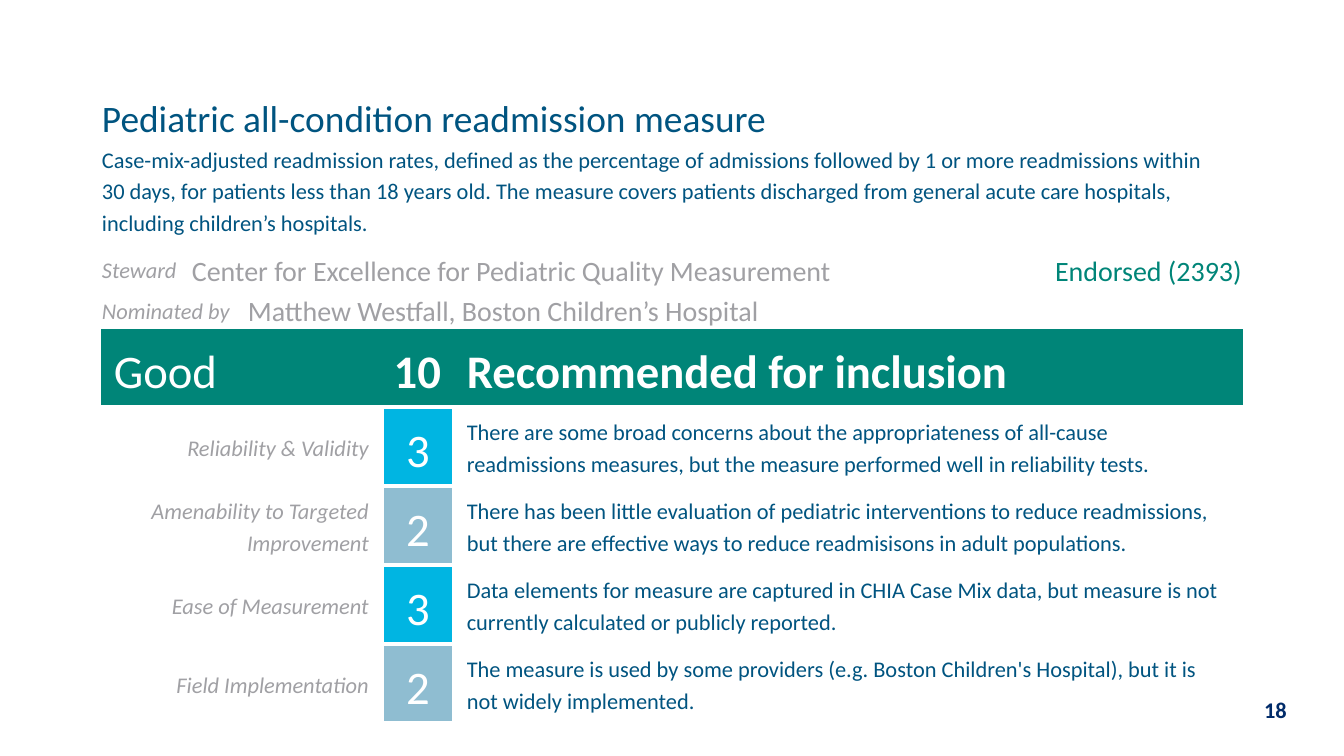
import pptx
import pptx.dml.color
import pptx.enum.text
import pptx.oxml
import pptx.oxml.ns
import pptx.util

EMU_PER_PX = 9144000 / 1344
FONT = "Calibri"
NAVY, GREY, GREEN, WHITE, PAGE = "005480", "A0A0A4", "008578", "FFFFFF", "002B69"
SCORE_FILLS = {3: "00B5E2", 2: "8FBDD1"}
NO_GRID_STYLE = "{2D5ABB26-0587-4C30-8999-92F81FD0307C}"
ALIGN = pptx.enum.text.PP_ALIGN
MIDDLE = pptx.enum.text.MSO_ANCHOR.MIDDLE
TOP = pptx.enum.text.MSO_ANCHOR.TOP

COLUMNS = [90, 56, 94, 41, 72, 442, 347]
ROWS = [53, 106, 41, 40, 77] + [79] * 4
DESCRIPTION = (
    "Case-mix-adjusted readmission rates, defined as the percentage of admissions "
    "followed by 1 or more readmissions within 30 days, for patients less than 18 years "
    "old. The measure covers patients discharged from general acute care hospitals, "
    "including children’s hospitals."
)
CRITERIA = [
    ("Reliability & Validity", 3,
     "There are some broad concerns about the appropriateness of all-cause readmissions "
     "measures, but the measure performed well in reliability tests."),
    ("Amenability to Targeted Improvement", 2,
     "There has been little evaluation of pediatric interventions to reduce readmissions, "
     "but there are effective ways to reduce readmisisons in adult populations."),
    ("Ease of Measurement", 3,
     "Data elements for measure are captured in CHIA Case Mix data, but measure is not "
     "currently calculated or publicly reported."),
    ("Field Implementation", 2,
     "The measure is used by some providers (e.g. Boston Children's Hospital), but it is "
     "not widely implemented."),
]


def px(n):
    """Turn pixels into EMU."""
    return pptx.util.Emu(round(n * EMU_PER_PX))


def rgb(color):
    """Turn a hex string into a colour."""
    return pptx.dml.color.RGBColor.from_string(color)


def write(tf, text, size=12, color=NAVY, bold=False, italic=False, align=ALIGN.LEFT, spacing=1.15):
    """Write one formatted paragraph into a text frame."""
    tf.word_wrap = True
    p = tf.paragraphs[0]
    p.alignment = align
    p.line_spacing = spacing
    r = p.add_run()
    r.text = text
    r.font.name = FONT
    r.font.size = pptx.util.Pt(size)
    r.font.bold = bold
    r.font.italic = italic
    r.font.color.rgb = rgb(color)


def set_borders(cell, sides):
    """Give the named sides of a cell a white border."""
    for side in sides:
        cell._tc.get_or_add_tcPr().append(pptx.oxml.parse_xml(
            f'<a:ln{side} {pptx.oxml.ns.nsdecls("a")} w="28575"><a:solidFill>'
            f'<a:srgbClr val="{WHITE}"/></a:solidFill></a:ln{side}>'))


def put(table, row, col, text, span=1, insets=(13, 7, 13, 7), anchor=MIDDLE,
        fill=None, borders="", **fmt):
    """Fill one cell, merged over a span of columns."""
    cell = table.cell(row, col)
    if span > 1:
        cell.merge(table.cell(row, col + span - 1))
    for i in range(col, col + span):
        part = table.cell(row, i)
        set_borders(part, borders)
        if fill:
            part.fill.solid()
            part.fill.fore_color.rgb = rgb(fill)
        else:
            part.fill.background()
    cell.margin_left, cell.margin_top, cell.margin_right, cell.margin_bottom = map(px, insets)
    cell.vertical_anchor = anchor
    write(cell.text_frame, text, **fmt)


def add_summary(table):
    """Write the measure's name, description, steward and nominator."""
    tight = (1, 1, 13, 0)
    label = dict(insets=tight, color=GREY, italic=True)
    name = dict(span=5, insets=tight, size=15, color=GREY)
    put(table, 0, 0, "Pediatric all-condition readmission measure", span=7, insets=tight, size=20)
    put(table, 1, 0, DESCRIPTION, span=7, insets=(1, 1, 13, 7), anchor=TOP)
    put(table, 2, 0, "Steward", **label)
    put(table, 2, 1, "Center for Excellence for Pediatric Quality Measurement", **name)
    put(table, 2, 6, "Endorsed (2393)", insets=(13, 1, 1, 0), size=15, color=GREEN,
        align=ALIGN.RIGHT)
    put(table, 3, 0, "Nominated by", span=2, **label)
    put(table, 3, 2, "Matthew Westfall, Boston Children’s Hospital", **name)


def add_ratings(table, first_row):
    """Write the overall rating and one row for each criterion."""
    band = dict(fill=GREEN, size=25, color=WHITE)
    total = sum(score for _, score, _ in CRITERIA)
    put(table, first_row, 0, "Good", span=3, **band)
    put(table, first_row, 3, str(total), span=2, bold=True, align=ALIGN.RIGHT, **band)
    put(table, first_row, 5, "Recommended for inclusion", span=2, bold=True, **band)
    for row, (criterion, score, reason) in enumerate(CRITERIA, first_row + 1):
        put(table, row, 0, criterion, span=4, borders="RT", color=GREY, italic=True,
            align=ALIGN.RIGHT)
        put(table, row, 4, str(score), fill=SCORE_FILLS[score], borders="LRTB", size=25,
            color=WHITE, align=ALIGN.CENTER)
        put(table, row, 5, reason, span=2, borders="LRTB")


def add_measure_table(s, x, y):
    """Add the measure table with its top left corner at x, y."""
    shape = s.shapes.add_table(len(ROWS), len(COLUMNS), px(x), px(y),
                               px(sum(COLUMNS)), px(sum(ROWS)))
    table = shape.table
    table.first_row = table.horz_banding = False
    table._tbl.tblPr.find(pptx.oxml.ns.qn("a:tableStyleId")).text = NO_GRID_STYLE
    for column, width in zip(table.columns, COLUMNS):
        column.width = px(width)
    for row, height in zip(table.rows, ROWS):
        row.height = px(height)
    add_summary(table)
    add_ratings(table, 4)


def add_page_number(s, x, y, w, h):
    """Add the page number in the given box."""
    tf = s.shapes.add_textbox(px(x), px(y), px(w), px(h)).text_frame
    tf.vertical_anchor = MIDDLE
    write(tf, "18", color=PAGE, bold=True, align=ALIGN.RIGHT, spacing=1.0)


def main():
    """Build and save the slide."""
    prs = pptx.Presentation()
    prs.slide_width, prs.slide_height = px(1344), px(756)
    s = prs.slides.add_slide(prs.slide_layouts[6])
    add_page_number(s, 1020, 696, 280, 27)
    add_measure_table(s, 101, 89)
    prs.save("out.pptx")


if __name__ == "__main__":
    main()
